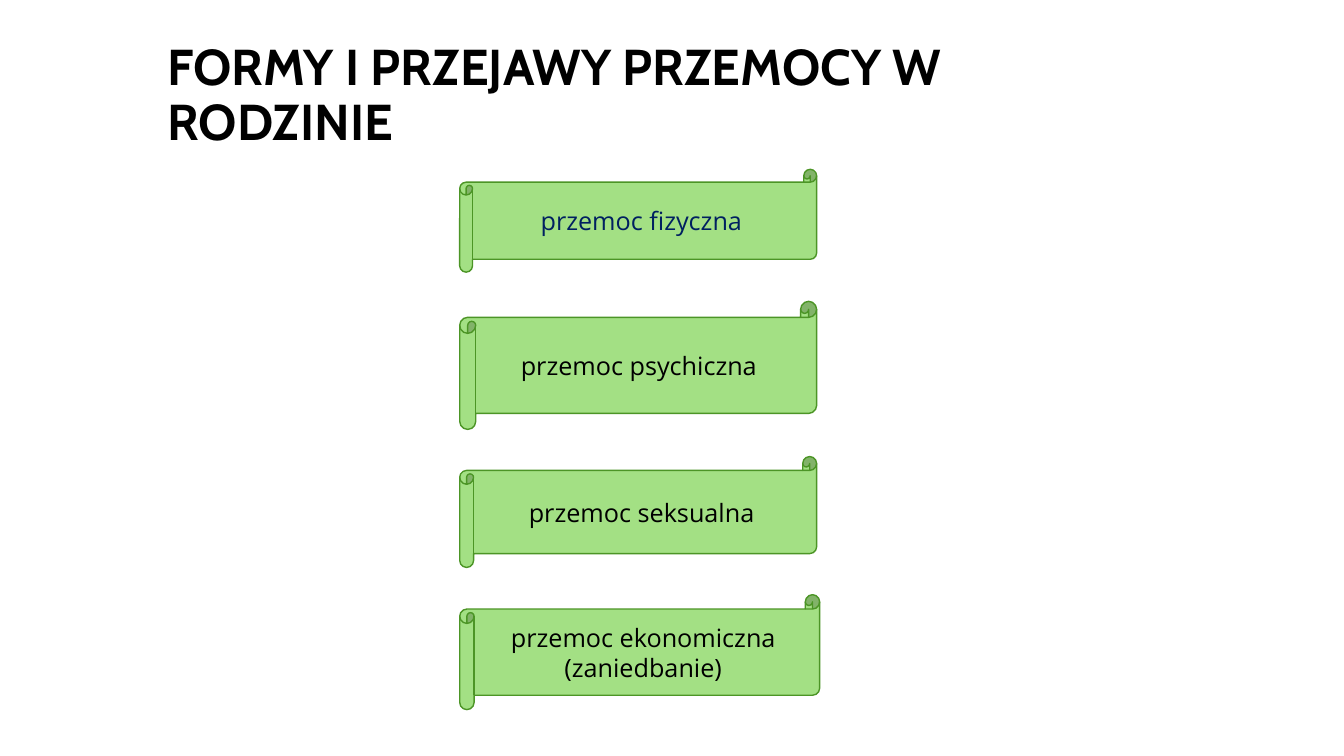
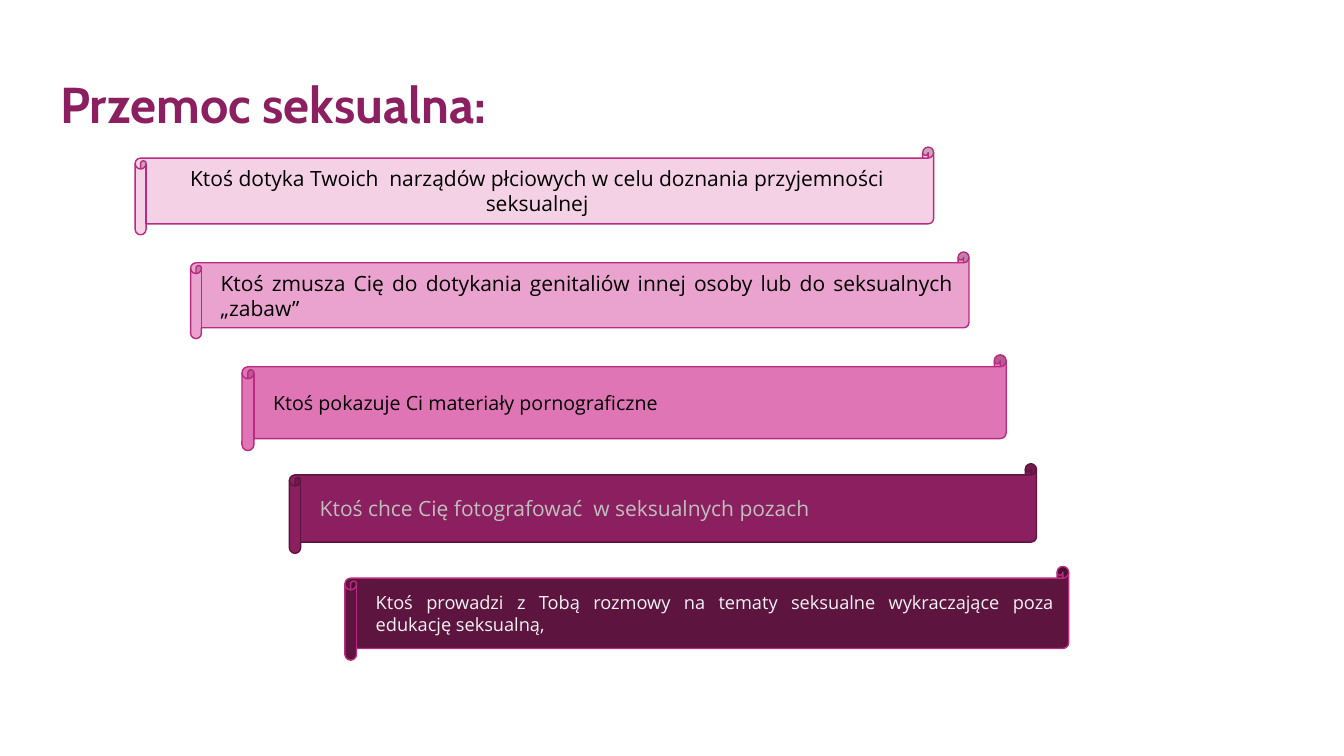
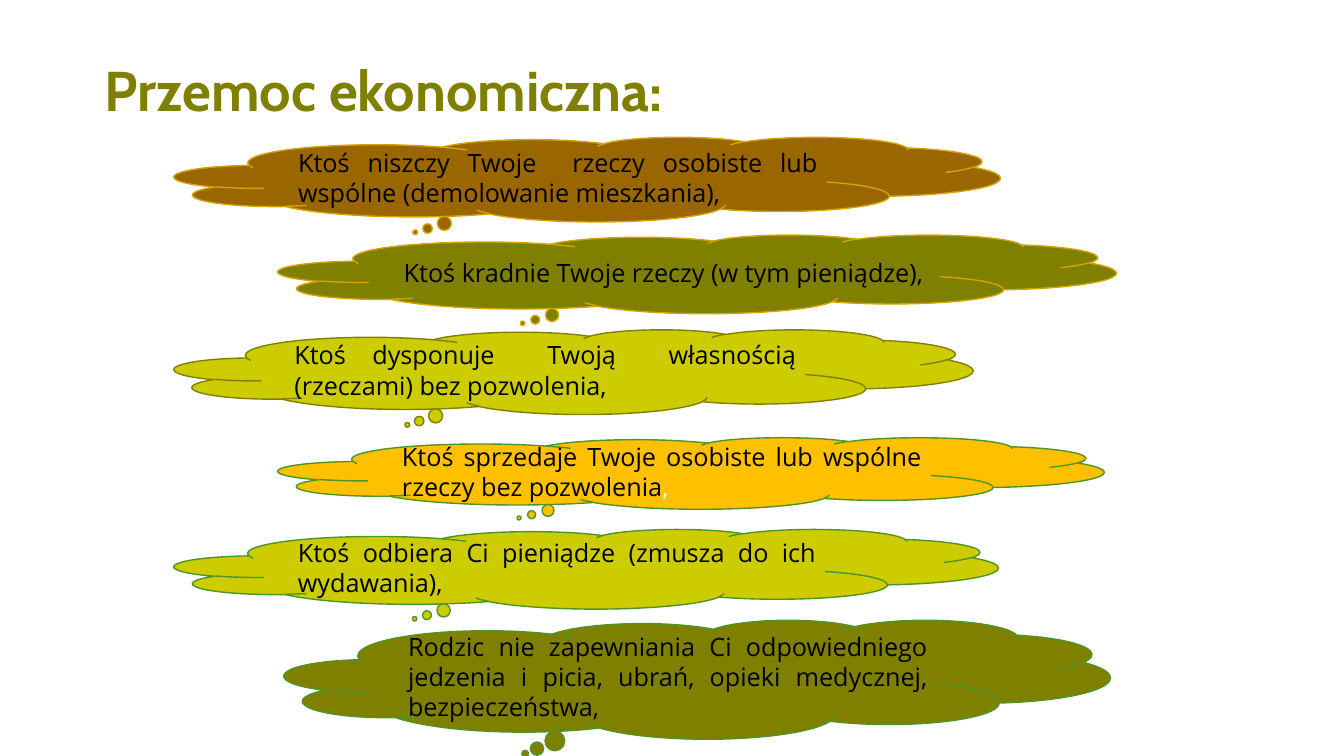
from dataclasses import dataclass, field

from pptx import Presentation
from pptx.dml.color import RGBColor as Rgb
from pptx.enum.shapes import MSO_AUTO_SHAPE_TYPE as Kind
from pptx.enum.text import MSO_ANCHOR as Anchor, PP_ALIGN as Align
from pptx.util import Emu, Pt

EMU_PER_PX = 9144


@dataclass(frozen=True)
class Theme:
    title_font: str = "Cabin"
    body_font: str = "Open Sans"
    black: str = "000000"
    white: str = "FFFFFF"
    pale_gray: str = "F2F2F2"
    silver: str = "BFBFBF"
    navy: str = "002060"
    mint: str = "A3E084"
    green: str = "4C9526"
    blush: str = "F5D1E6"
    rose: str = "EAA3CE"
    pink: str = "E075B5"
    magenta: str = "BA2A80"
    plum: str = "8C1F60"
    wine: str = "5D1540"
    brown: str = "996600"
    olive: str = "808000"
    lime: str = "CCCC00"
    amber: str = "FFC000"
    gold: str = "D3A300"
    title_size: int = 36
    large_title_size: int = 40
    body_size: int = 18
    note_size: int = 15
    small_note_size: int = 14
    tiny_note_size: int = 13
    line_width: int = 1
    title_spacing: float = 0.9


THEME = Theme()


@dataclass(frozen=True)
class Box:
    left: int
    top: int
    width: int
    height: int


@dataclass(frozen=True)
class Span:
    text: str
    color: str = THEME.black


@dataclass(frozen=True)
class Title:
    box: Box
    text: str
    color: str
    size: int = THEME.title_size


@dataclass(frozen=True)
class Panel:
    box: Box
    fill: str
    line: str
    spans: tuple[Span, ...]
    size: int = THEME.body_size
    align: Align = Align.JUSTIFY
    inset: int = 10


@dataclass(frozen=True)
class Page:
    title: Title
    kind: Kind
    panels: list[Panel] = field(default_factory=list)


def px(length: int) -> Emu:
    return Emu(length * EMU_PER_PX)


def place(box: Box) -> tuple[Emu, ...]:
    return px(box.left), px(box.top), px(box.width), px(box.height)


def apply(target, formats: dict) -> None:
    for name, value in formats.items():
        setattr(target, name, value)


def write(shape, spans: tuple[Span, ...], frame_format: dict, para_format: dict, font_format: dict) -> None:
    frame = shape.text_frame
    apply(frame, {"word_wrap": True, "vertical_anchor": Anchor.MIDDLE, **frame_format})
    para = frame.paragraphs[0]
    apply(para, para_format)
    for span in spans:
        run = para.add_run()
        run.text = span.text
        apply(run.font, font_format)
        run.font.color.rgb = Rgb.from_string(span.color)


def draw_title(slide, title: Title) -> None:
    write(
        slide.shapes.add_textbox(*place(title.box)),
        (Span(title.text, title.color),),
        {},
        {"alignment": Align.LEFT, "line_spacing": THEME.title_spacing},
        {"name": THEME.title_font, "size": Pt(title.size), "bold": True},
    )


def draw_panel(slide, kind: Kind, panel: Panel) -> None:
    shape = slide.shapes.add_shape(kind, *place(panel.box))
    shape.shadow.inherit = False
    shape.fill.solid()
    shape.fill.fore_color.rgb = Rgb.from_string(panel.fill)
    shape.line.color.rgb = Rgb.from_string(panel.line)
    shape.line.width = Pt(THEME.line_width)
    write(
        shape,
        panel.spans,
        {"margin_left": px(panel.inset)},
        {"alignment": panel.align},
        {"name": THEME.body_font, "size": Pt(panel.size)},
    )


def form_panel(top: int, height: int, text: str, color: str = THEME.black, width: int = 354) -> Panel:
    return Panel(Box(456, top, width, height), THEME.mint, THEME.green, (Span(text, color),), align=Align.CENTER)


def step_panel(
    box: Box, fill: str, text: str, color: str = THEME.black, size: int = THEME.note_size, line: str = THEME.magenta
) -> Panel:
    return Panel(box, fill, line, (Span(text, color),), size, inset=19)


PAGES = [
    Page(
        Title(Box(156, 64, 994, 64), "FORMY I PRZEJAWY PRZEMOCY W RODZINIE", THEME.black),
        Kind.HORIZONTAL_SCROLL,
        [
            form_panel(168, 102, "przemoc fizyczna", THEME.navy),
            form_panel(299, 127, "przemoc psychiczna "),
            form_panel(453, 110, "przemoc seksualna"),
            form_panel(590, 114, "przemoc ekonomiczna (zaniedbanie)", width=357),
        ],
    ),
    Page(
        Title(Box(50, 74, 1192, 64), "Przemoc seksualna:", THEME.plum),
        Kind.HORIZONTAL_SCROLL,
        [
            Panel(
                Box(134, 146, 792, 87),
                THEME.blush,
                THEME.magenta,
                (Span("Ktoś dotyka Twoich  narządów płciowych w celu doznania przyjemności seksualnej"),),
                THEME.note_size,
                Align.CENTER,
            ),
            step_panel(
                Box(189, 250, 772, 86),
                THEME.rose,
                "Ktoś zmusza Cię do dotykania genitaliów innej osoby lub do seksualnych „zabaw”",
            ),
            step_panel(
                Box(240, 352, 758, 95),
                THEME.pink,
                "Ktoś pokazuje Ci materiały pornograficzne",
                size=THEME.small_note_size,
            ),
            step_panel(
                Box(287, 460, 741, 89),
                THEME.plum,
                "Ktoś chce Cię fotografować  w seksualnych pozach",
                THEME.silver,
                line=THEME.wine,
            ),
            step_panel(
                Box(342, 562, 718, 93),
                THEME.wine,
                "Ktoś prowadzi z Tobą rozmowy na tematy seksualne wykraczające poza edukację seksualną,",
                THEME.pale_gray,
                THEME.tiny_note_size,
            ),
        ],
    ),
    Page(
        Title(Box(94, 30, 1049, 125), "Przemoc ekonomiczna:", THEME.olive, THEME.large_title_size),
        Kind.CLOUD_CALLOUT,
        [
            Panel(
                Box(173, 136, 819, 84),
                THEME.brown,
                THEME.gold,
                (Span("Ktoś niszczy Twoje  rzeczy osobiste lub wspólne (demolowanie mieszkania), "),),
            ),
            Panel(
                Box(276, 233, 831, 78),
                THEME.olive,
                THEME.gold,
                (Span("Ktoś kradnie Twoje rzeczy (w tym pieniądze), "),),
            ),
            Panel(
                Box(173, 327, 792, 84),
                THEME.lime,
                THEME.olive,
                (Span("Ktoś dysponuje  Twoją  własnością (rzeczami) bez pozwolenia, "),),
            ),
            Panel(
                Box(276, 434, 819, 71),
                THEME.amber,
                THEME.green,
                (
                    Span("Ktoś sprzedaje Twoje osobiste lub wspólne rzeczy bez pozwolenia"),
                    Span(", ", THEME.white),
                ),
            ),
            Panel(
                Box(173, 525, 817, 79),
                THEME.lime,
                THEME.green,
                (Span("Ktoś odbiera Ci pieniądze (zmusza do ich wydawania), "),),
            ),
            Panel(
                Box(282, 615, 819, 118),
                THEME.olive,
                THEME.green,
                (
                    Span(
                        "Rodzic nie zapewniania Ci odpowiedniego jedzenia i picia, ubrań, "
                        "opieki medycznej, bezpieczeństwa, "
                    ),
                ),
            ),
        ],
    ),
]


def main() -> None:
    deck = Presentation()
    apply(deck, {"slide_width": px(1333), "slide_height": px(750)})
    for page in PAGES:
        slide = deck.slides.add_slide(deck.slide_layouts[6])
        draw_title(slide, page.title)
        for panel in page.panels:
            draw_panel(slide, page.kind, panel)
    deck.save("out.pptx")


if __name__ == "__main__":
    main()
